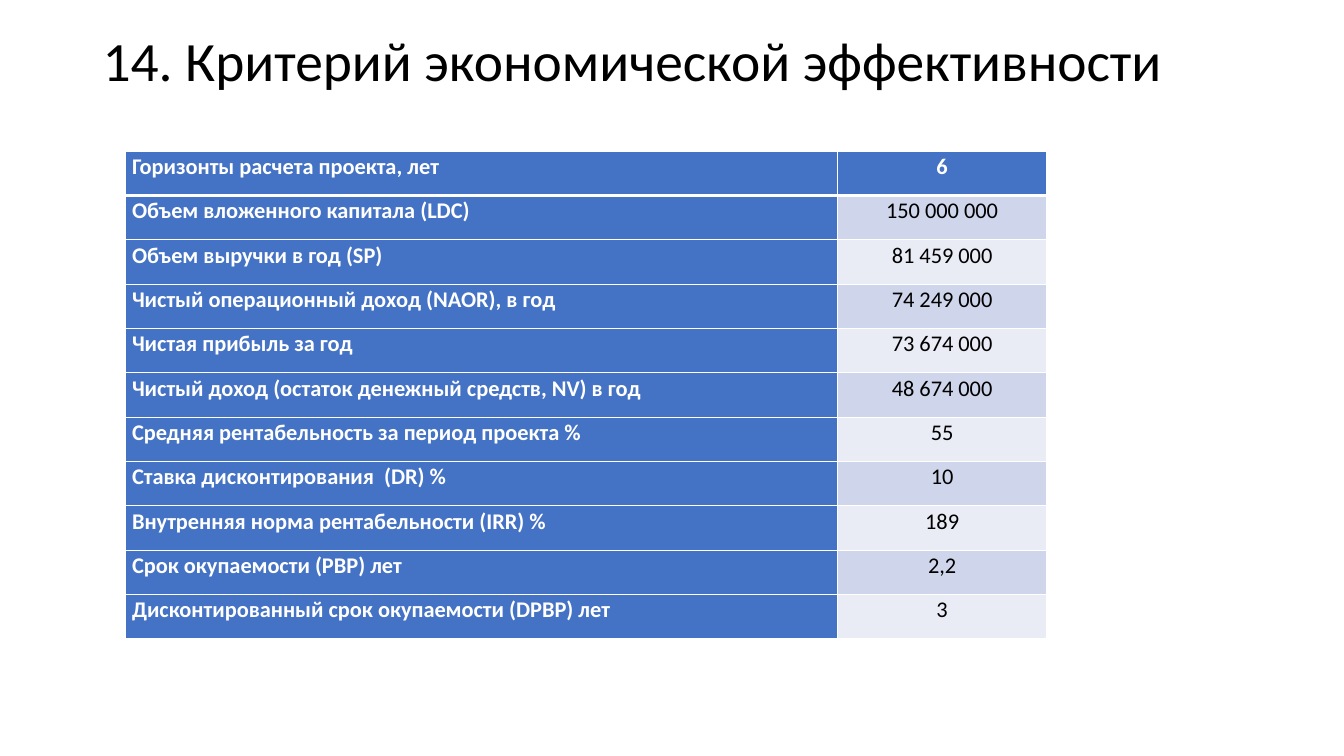
from dataclasses import dataclass

from lxml import etree
from pptx import Presentation
from pptx import util as u
from pptx.dml import color
from pptx.enum import text
from pptx.oxml import ns


@dataclass(frozen=True)
class Theme:
    font: str = "Calibri"
    title_size: float = 39.6
    cell_size: float = 16
    dark: str = "000000"
    light: str = "FFFFFF"
    accent: str = "4472C4"
    bands: tuple = ("E9EBF5", "CFD5EA")
    rule: float = 1
    header_rule: float = 3


THEME = Theme()
WIDTH, HEIGHT = u.Inches(13.33), u.Inches(7.5)
ROW = u.Inches(0.44)
COLUMNS = (u.Inches(7.07), u.Inches(2.07))

TITLE = "14. Критерий экономической эффективности"
CRITERIA = [
    ("Горизонты расчета проекта, лет", "6"),
    ("Объем вложенного капитала (LDC)", "150 000 000"),
    ("Объем выручки в год (SP)", "81 459 000"),
    ("Чистый операционный доход (NAOR), в год", "74 249 000"),
    ("Чистая прибыль за год", "73 674 000"),
    ("Чистый доход (остаток денежный средств, NV) в год", "48 674 000"),
    ("Средняя рентабельность за период проекта %", "55"),
    ("Ставка дисконтирования  (DR) %", "10"),
    ("Внутренняя норма рентабельности (IRR) %", "189"),
    ("Срок окупаемости (PBP) лет", "2,2"),
    ("Дисконтированный срок окупаемости (DPBP) лет", "3"),
]


def set_all(obj, values):
    for name, value in values.items():
        setattr(obj, name, value)


def write(tf, words, rgb, paragraph, font):
    p = tf.paragraphs[0]
    set_all(p, paragraph)
    r = p.add_run()
    r.text = words
    set_all(r.font, {"name": THEME.font, **font})
    r.font.color.rgb = color.RGBColor.from_string(rgb)


def add_title(s, words):
    sp = s.shapes.add_textbox(
        int(WIDTH * 0.069), int(HEIGHT * 0.017), int(WIDTH * 0.863), int(HEIGHT * 0.135)
    )
    tf = sp.text_frame
    set_all(tf, {"word_wrap": True, "vertical_anchor": text.MSO_ANCHOR.MIDDLE})
    write(tf, words, THEME.dark, {"line_spacing": 0.9}, {"size": u.Pt(THEME.title_size)})


def add_borders(cell, row):
    tc_pr = cell._tc.get_or_add_tcPr()
    header_edge = {0: "lnB", 1: "lnT"}.get(row)
    for edge in ("lnL", "lnR", "lnT", "lnB"):
        points = THEME.header_rule if edge == header_edge else THEME.rule
        line = etree.SubElement(tc_pr, ns.qn(f"a:{edge}"), w=str(u.Pt(points)))
        fill = etree.SubElement(line, ns.qn("a:solidFill"))
        etree.SubElement(fill, ns.qn("a:srgbClr"), val=THEME.light)


def fill_cell(cell, words, row, col):
    heading = row == 0 or col == 0
    set_all(cell, {
        "margin_left": u.Inches(0.07), "margin_right": u.Inches(0.07),
        "margin_top": 0, "margin_bottom": 0,
        "vertical_anchor": text.MSO_ANCHOR.TOP,
    })
    add_borders(cell, row)
    cell.fill.solid()
    fill = THEME.accent if heading else THEME.bands[row % 2]
    cell.fill.fore_color.rgb = color.RGBColor.from_string(fill)
    align = text.PP_ALIGN.CENTER if col else text.PP_ALIGN.LEFT
    write(
        cell.text_frame, words, THEME.light if heading else THEME.dark,
        {"alignment": align, "line_spacing": 1.07},
        {"size": u.Pt(THEME.cell_size), "bold": heading},
    )


def add_criteria(s, rows):
    table = s.shapes.add_table(
        len(rows), len(COLUMNS), int(WIDTH * 0.093), int(HEIGHT * 0.2),
        sum(COLUMNS), ROW * len(rows),
    ).table
    set_all(table, {"first_col": True})
    for column, width in zip(table.columns, COLUMNS):
        column.width = width
    for i, values in enumerate(rows):
        table.rows[i].height = ROW
        for j, words in enumerate(values):
            fill_cell(table.cell(i, j), words, i, j)


def main():
    prs = Presentation()
    set_all(prs, {"slide_width": WIDTH, "slide_height": HEIGHT})
    s = prs.slides.add_slide(prs.slide_layouts[6])
    add_title(s, TITLE)
    add_criteria(s, CRITERIA)
    prs.save("out.pptx")


if __name__ == "__main__":
    main()
